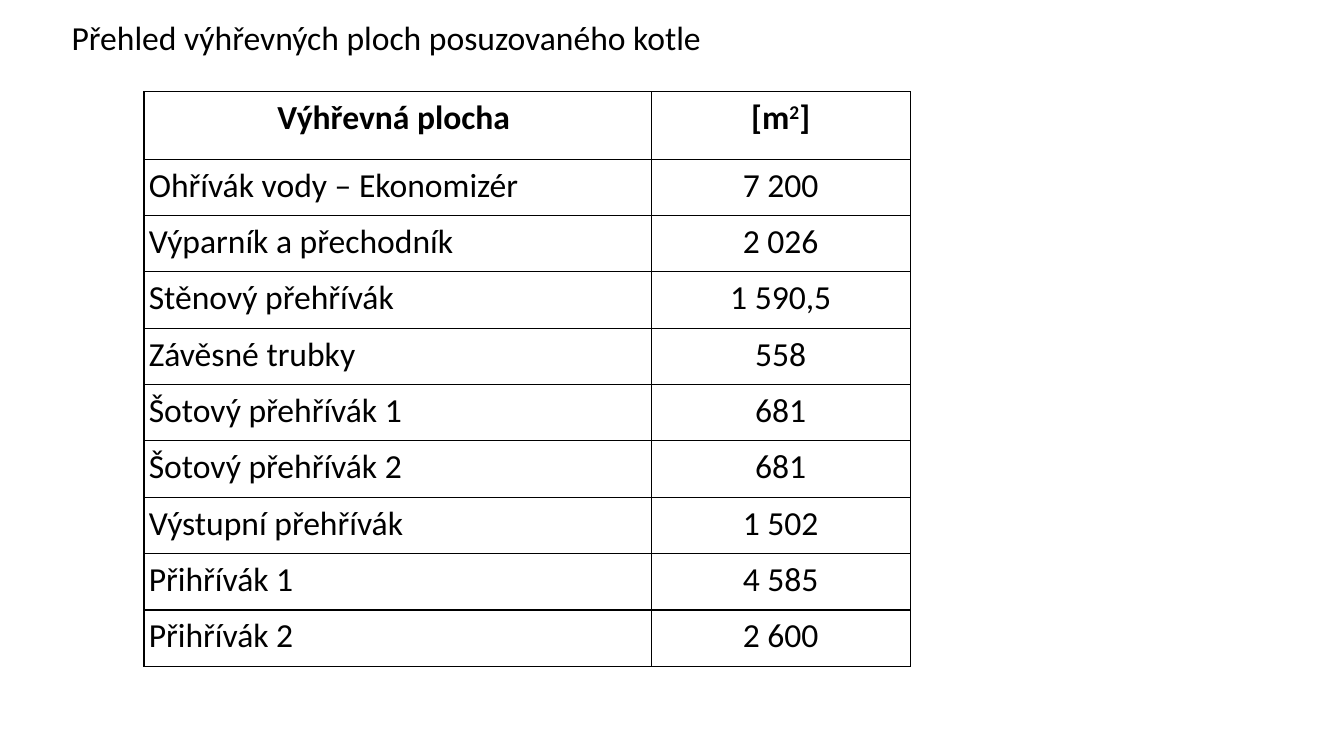
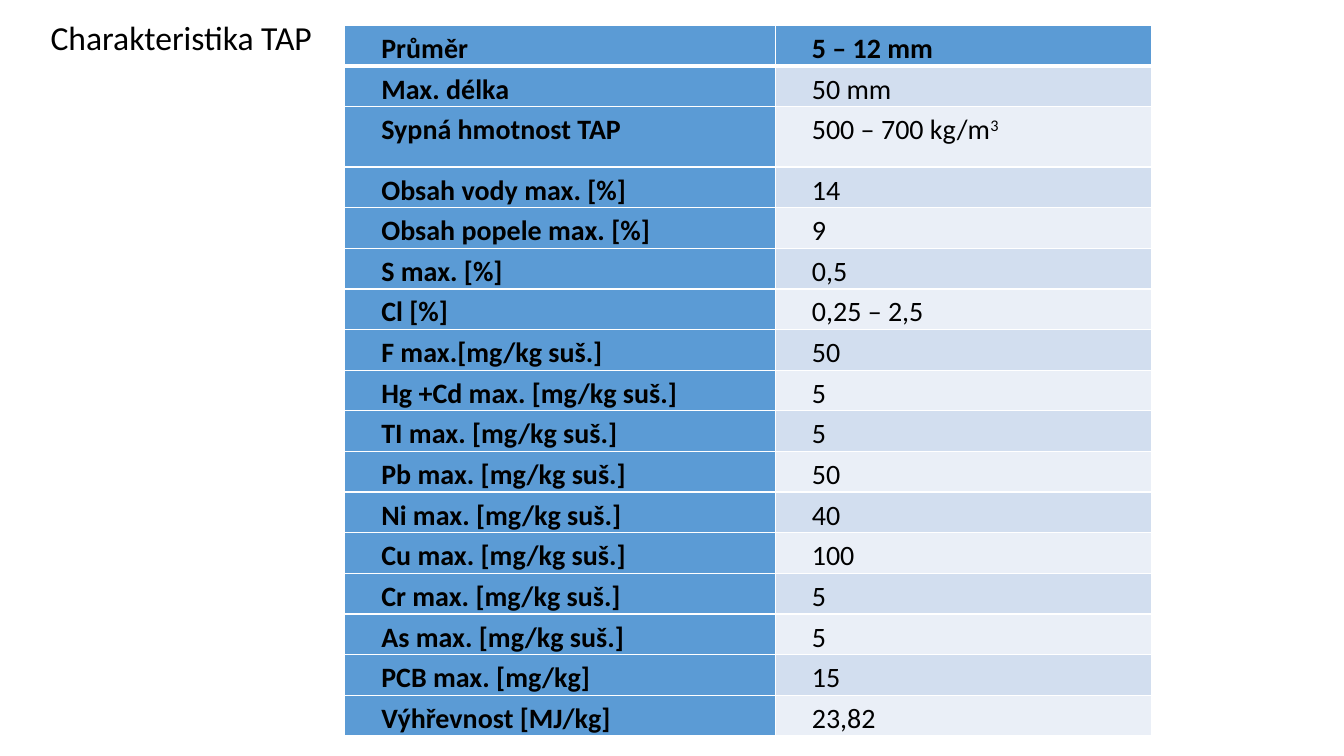
from lxml import etree
from pptx import Presentation
from pptx.dml.color import RGBColor
from pptx.enum.text import MSO_ANCHOR, PP_ALIGN
from pptx.oxml.ns import qn
from pptx.util import Cm, Pt

LEFT, CENTER = PP_ALIGN.LEFT, PP_ALIGN.CENTER
TOP = MSO_ANCHOR.TOP
FONT = "Calibri"
TITLE_ONLY = 5
COLORS = {
    "text": "000000",
    "white": "FFFFFF",
    "label": "5B9BD5",
    "band_dark": "D2DEEF",
    "band_light": "EAEFF7",
}


def add_text(p, text, size, bold=False):
    """Add runs to a paragraph; parts between ^ marks are superscript."""
    for i, part in enumerate(text.split("^")):
        r = p.add_run()
        r.text = part
        r.font.name = FONT
        r.font.size = Pt(size)
        r.font.bold = bold
        r.font.color.rgb = RGBColor.from_string(COLORS["text"])
        if i % 2:
            r.font._element.set("baseline", "30000")


def set_borders(cell, color, bottom=1):
    tcPr = cell._tc.get_or_add_tcPr()
    for side, width in (("L", 1), ("R", 1), ("T", 1), ("B", bottom)):
        ln = etree.SubElement(tcPr, qn(f"a:ln{side}"), w=str(int(Pt(width))))
        fill = etree.SubElement(ln, qn("a:solidFill"))
        etree.SubElement(fill, qn("a:srgbClr"), val=COLORS[color])


SURFACES = [
    ("Výhřevná plocha ", "[m^2^]"),
    ("Ohřívák vody – Ekonomizér", "7 200"),
    ("Výparník a přechodník", "2 026"),
    ("Stěnový přehřívák", "1 590,5"),
    ("Závěsné trubky", "558"),
    ("Šotový přehřívák 1", "681"),
    ("Šotový přehřívák 2", "681"),
    ("Výstupní přehřívák", "1 502"),
    ("Přihřívák 1", "4 585"),
    ("Přihřívák 2", "2 600"),
]
FUEL = [
    ("Průměr", "5 – 12 mm"),
    ("Max. délka", "50 mm"),
    ("Sypná hmotnost TAP", "500 – 700 kg/m^3"),
    ("Obsah vody max. [%]", "14"),
    ("Obsah popele max. [%]", "9"),
    ("S max. [%]", "0,5"),
    ("Cl [%]", "0,25 – 2,5"),
    ("F max.[mg/kg suš.]", "50"),
    ("Hg +Cd max. [mg/kg suš.]", "5"),
    ("TI max. [mg/kg suš.]", "5"),
    ("Pb max. [mg/kg suš.]", "50"),
    ("Ni max. [mg/kg suš.]", "40"),
    ("Cu max. [mg/kg suš.]", "100"),
    ("Cr max. [mg/kg suš.]", "5"),
    ("As max. [mg/kg suš.]", "5"),
    ("PCB max. [mg/kg]", "15"),
    ("Výhřevnost [MJ/kg]", "23,82"),
]

# Lengths in cm; "tall" is the index and height of the one taller row
SLIDES = [
    {"title": "Přehled výhřevných ploch posuzovaného kotle",
     "title_at": (1.55, 0.3, 32.3, 6.02), "rows": SURFACES,
     "table_at": (3.63, 2.31), "cols": (12.78, 6.53),
     "row": 1.42, "tall": (0, 1.7), "size": 24, "banded": False,
     "margins": (0.12, 0)},
    {"title": "Charakteristika TAP",
     "title_at": (1.02, 0.3, 32.54, 1.27), "rows": FUEL,
     "table_at": (8.69, 0.64), "cols": (10.85, 9.47),
     "row": 1, "tall": (2, 1.52), "size": 20, "banded": True,
     "margins": (0.18, 0.03)},
]

prs = Presentation()
prs.slide_width, prs.slide_height = Cm(33.87), Cm(19.05)

for spec_row in SLIDES:
    s = prs.slides.add_slide(prs.slide_layouts[TITLE_ONLY])
    banded = spec_row["banded"]

    # Title
    sp = s.shapes.title
    sp.left, sp.top, sp.width, sp.height = map(Cm, spec_row["title_at"])
    tf = sp.text_frame
    tf.word_wrap = True
    tf.vertical_anchor = TOP
    p = tf.paragraphs[0]
    p.alignment = LEFT
    add_text(p, spec_row["title"], 24)

    # Table grid
    rows, cols = spec_row["rows"], spec_row["cols"]
    heights = [spec_row["row"]] * len(rows)
    tall_index, tall_height = spec_row["tall"]
    heights[tall_index] = tall_height
    x, y = spec_row["table_at"]
    table = s.shapes.add_table(len(rows), len(cols), Cm(x), Cm(y),
                               Cm(sum(cols)), Cm(sum(heights))).table
    table.first_row = table.horz_banding = False
    for column, width in zip(table.columns, cols):
        column.width = Cm(width)

    # Table cells
    side, top = spec_row["margins"]
    for i, texts in enumerate(rows):
        table.rows[i].height = Cm(heights[i])
        for j, text in enumerate(texts):
            cell = table.cell(i, j)
            cell.margin_left = cell.margin_right = Cm(side)
            cell.margin_top, cell.margin_bottom = Cm(top), 0
            p = cell.text_frame.paragraphs[0]
            p.line_spacing = 1.15
            add_text(p, text, spec_row["size"], i == 0 or (banded and j == 0))
            if banded:
                pPr = p._p.get_or_add_pPr()
                pPr.set("marL", str(int(Cm(1.5))))
                pPr.set("indent", str(int(Cm(-0.76))))
                set_borders(cell, "white", 3 if i == 0 else 1)
                band = "band_dark" if i % 2 else "band_light"
                color = "label" if i == 0 or j == 0 else band
                cell.fill.solid()
                cell.fill.fore_color.rgb = RGBColor.from_string(COLORS[color])
            else:
                p.space_after = Pt(6)
                p.alignment = CENTER if i == 0 or j == 1 else LEFT
                set_borders(cell, "text")
                cell.fill.background()

prs.save("out.pptx")
